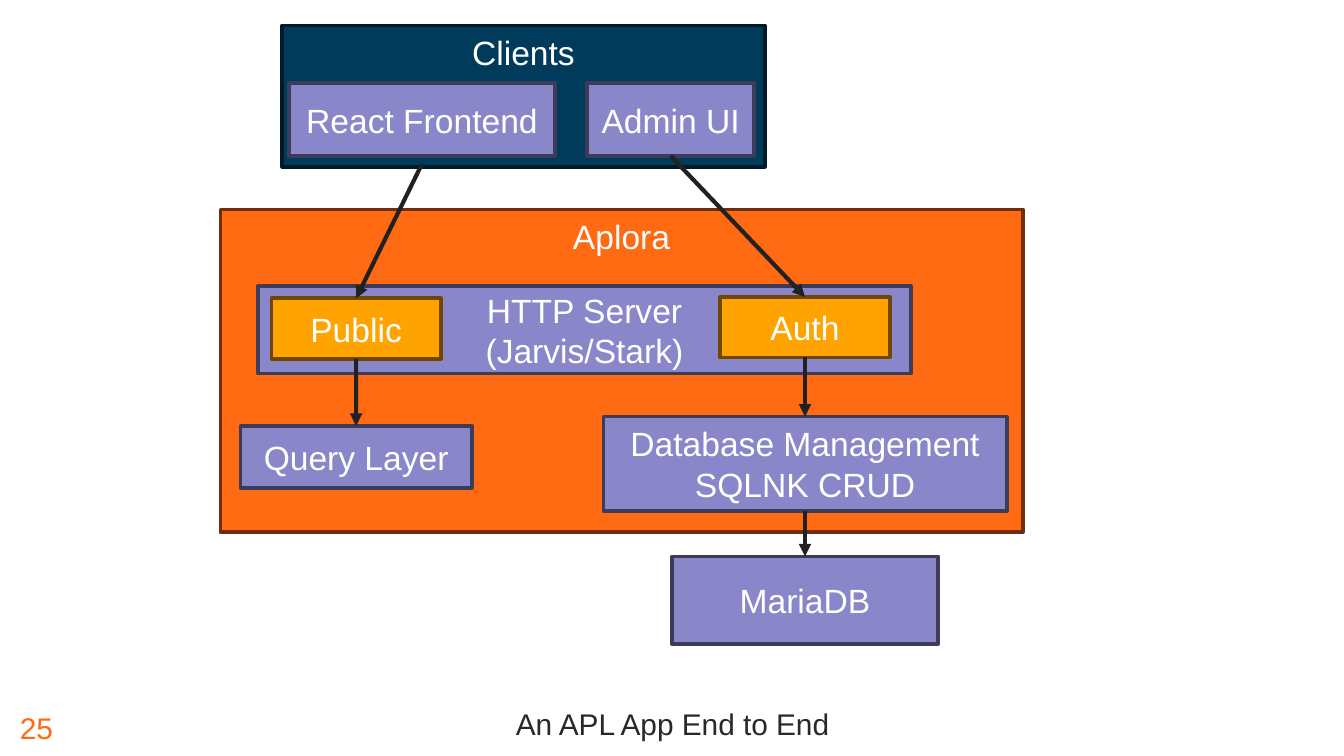
from lxml.etree import SubElement
from pptx import Presentation
from pptx.dml.color import RGBColor
from pptx.enum.shapes import MSO_CONNECTOR, MSO_SHAPE
from pptx.enum.text import MSO_ANCHOR, PP_ALIGN
from pptx.oxml.ns import qn
from pptx.util import Inches, Pt

ORANGE = "FF6A13"
NAVY = "003B5C"
PURPLE = "8986CA"
AMBER = "FFA300"
WHITE = "FFFFFF"
INK = "282828"
ARROW = "222121"
OUTLINES = {ORANGE: "702E08", NAVY: "001A28", PURPLE: "3C3B59", AMBER: "704700"}
TOP, BOTTOM = 0, 2


def color(value):
    return RGBColor.from_string(value)


def write_text(shape, lines, size, text_color, alignment, anchor, spacing=None):
    frame = shape.text_frame
    frame.word_wrap = True
    frame.vertical_anchor = anchor
    for index, line in enumerate(lines):
        paragraph = frame.add_paragraph() if index else frame.paragraphs[0]
        paragraph.alignment = alignment
        paragraph.line_spacing = spacing
        run = paragraph.add_run()
        run.text = line
        run.font.name = "Arial"
        run.font.size = Pt(size)
        run.font.color.rgb = color(text_color)


def add_process(slide, box, lines, fill, anchor=MSO_ANCHOR.MIDDLE):
    shape = slide.shapes.add_shape(
        MSO_SHAPE.FLOWCHART_PROCESS, *[Inches(length) for length in box]
    )
    shape.shadow.inherit = False
    shape.fill.solid()
    shape.fill.fore_color.rgb = color(fill)
    shape.line.color.rgb = color(OUTLINES[fill])
    shape.line.width = Pt(2)
    shape.text_frame.margin_left = shape.text_frame.margin_right = Inches(0.05)
    write_text(shape, lines, 18, WHITE, PP_ALIGN.CENTER, anchor)
    return shape


def add_arrow(slide, source, target, start_drop=0):
    start_x = source.left + source.width // 2
    start_y = source.top + source.height + Inches(start_drop)
    end_x = target.left + target.width // 2
    connector = slide.shapes.add_connector(
        MSO_CONNECTOR.STRAIGHT, start_x, start_y, end_x, target.top
    )
    if not start_drop:
        connector.begin_connect(source, BOTTOM)
    connector.end_connect(target, TOP)
    connector.line.color.rgb = color(ARROW)
    connector.line.width = Pt(2.25)
    properties = connector._element.spPr
    SubElement(properties.find(qn("a:ln")), qn("a:tailEnd"), type="triangle")
    SubElement(properties, qn("a:effectLst"))


def add_clients(slide, left, top, width, height):
    add_process(slide, (left, top, width, height), ["Clients"], NAVY, MSO_ANCHOR.TOP)
    row = top + 0.43
    frontend = add_process(
        slide, (left + 0.05, row, 1.98, 0.54), ["React Frontend"], PURPLE
    )
    admin = add_process(slide, (left + 2.27, row, 1.24, 0.54), ["Admin UI"], PURPLE)
    return frontend, admin


def add_server(slide, left, top, width, height):
    add_process(
        slide, (left, top, width, height), ["HTTP Server", "(Jarvis/Stark)"], PURPLE
    )
    public = add_process(slide, (left + 0.1, top + 0.09, 1.26, 0.45), ["Public"], AMBER)
    auth = add_process(slide, (left + 3.44, top + 0.08, 1.26, 0.45), ["Auth"], AMBER)
    return public, auth


def add_backend(slide, left, top, width, height):
    add_process(slide, (left, top, width, height), ["Aplora"], ORANGE, MSO_ANCHOR.TOP)
    public, auth = add_server(slide, left + 0.28, top + 0.57, 4.86, 0.65)
    query = add_process(
        slide, (left + 0.15, top + 1.61, 1.72, 0.46), ["Query Layer"], PURPLE
    )
    management = add_process(
        slide,
        (left + 2.85, top + 1.54, 3, 0.7),
        ["Database Management", "SQLNK CRUD"],
        PURPLE,
    )
    add_arrow(slide, public, query)
    add_arrow(slide, auth, management)
    return public, auth, management


def add_footer(slide, left, top, width, height):
    parts = [
        ("An APL App End to End", left + 1.09, width - 1.09, INK, PP_ALIGN.CENTER, 0.8),
        ("25", left, 0.73, ORANGE, PP_ALIGN.LEFT, None),
    ]
    for text, part_left, part_width, text_color, alignment, spacing in parts:
        text_box = slide.shapes.add_textbox(
            Inches(part_left), Inches(top), Inches(part_width), Inches(height)
        )
        write_text(
            text_box, [text], 16, text_color, alignment, MSO_ANCHOR.MIDDLE, spacing
        )


def main():
    presentation = Presentation()
    presentation.slide_width = Inches(10)
    presentation.slide_height = Inches(10) * 9 // 16
    slide = presentation.slides.add_slide(presentation.slide_layouts[6])

    add_footer(slide, 0.05, 5.19, 8.82, 0.44)
    public, auth, management = add_backend(slide, 1.64, 1.56, 5.97, 2.4)
    frontend, admin = add_clients(slide, 2.1, 0.19, 3.59, 1.05)
    database = add_process(slide, (5, 4.14, 1.98, 0.65), ["MariaDB"], PURPLE)
    add_arrow(slide, frontend, public, start_drop=0.06)
    add_arrow(slide, admin, auth)
    add_arrow(slide, management, database)

    presentation.save("out.pptx")


if __name__ == "__main__":
    main()
